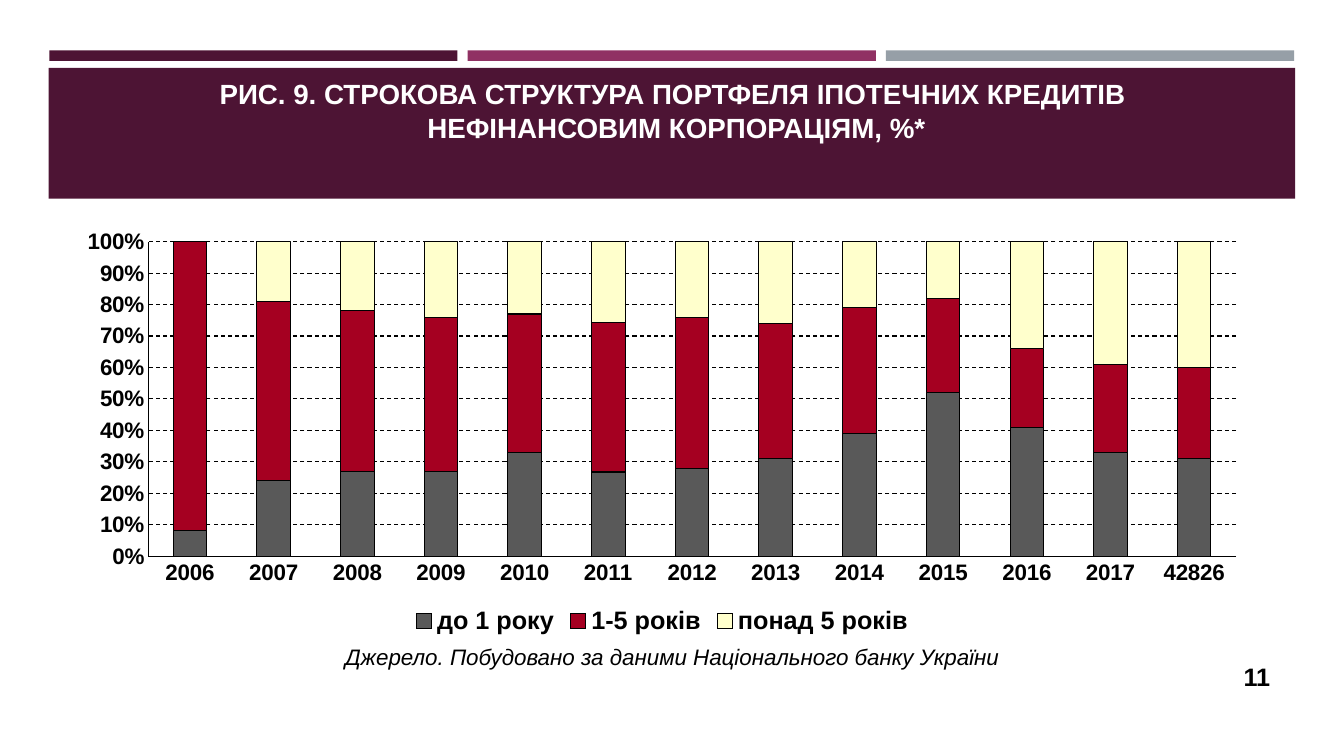
"""Builds the slide on the term structure of corporate mortgage loans."""
import dataclasses

import lxml.etree
import pptx
import pptx.chart.data
import pptx.dml.color
import pptx.enum.chart
import pptx.enum.dml
import pptx.enum.shapes
import pptx.enum.text
import pptx.oxml
import pptx.oxml.ns
import pptx.util

Pt = pptx.util.Pt
ALIGN = pptx.enum.text.PP_ALIGN
ANCHOR = pptx.enum.text.MSO_ANCHOR


@dataclasses.dataclass(frozen=True)
class Theme:
    font: str = "Arial"
    plum: str = "4D1434"
    accents: tuple = ("4D1434", "903163", "969FA7")
    terms: tuple = ("595959", "A50021", "FFFFCC")
    ink: str = "000000"
    light: str = "FFFFFF"
    title: float = 19.8
    body: float = 16
    legend: float = 18
    number: float = 18
    hairline: float = 0.75


def assign(target, values):
    for name, value in values.items():
        setattr(target, name, value)


class SlideBuilder:
    def __init__(self, slide, theme):
        self.slide = slide
        self.theme = theme

    def place(self, shape, box):
        assign(shape, dict(zip(("left", "top", "width", "height"), map(Pt, box))))

    def style_font(self, font, size, color=None, **flags):
        assign(font, {"name": self.theme.font, "size": Pt(size), **flags})
        font.color.rgb = pptx.dml.color.RGBColor.from_string(color or self.theme.ink)

    def style_line(self, line):
        line.color.rgb = pptx.dml.color.RGBColor.from_string(self.theme.ink)
        line.width = Pt(self.theme.hairline)

    def bar(self, box, color):
        shape = self.slide.shapes.add_shape(
            pptx.enum.shapes.MSO_SHAPE.RECTANGLE, *map(Pt, box))
        shape.fill.solid()
        shape.fill.fore_color.rgb = pptx.dml.color.RGBColor.from_string(color)
        shape.line.fill.background()
        shape.shadow.inherit = False
        self.slide.shapes.element.insert(2, shape.element)

    def set_text(self, shape, text, size, align, anchor, color=None, spacing=None, **flags):
        frame = shape.text_frame
        frame.text = text
        assign(frame, {"word_wrap": True, "vertical_anchor": anchor,
                       "auto_size": pptx.enum.text.MSO_AUTO_SIZE.NONE,
                       "margin_top": 0, "margin_bottom": 0})
        paragraph = frame.paragraphs[0]
        assign(paragraph, {"alignment": align, "space_before": Pt(0),
                           "line_spacing": spacing})
        for run in paragraph.runs:
            self.style_font(run.font, size, color, **flags)
        return paragraph

    def title(self, text, box):
        heading = self.slide.shapes.title
        self.place(heading, box)
        self.set_text(heading, text, self.theme.title, ALIGN.CENTER, ANCHOR.TOP,
                      self.theme.light, Pt(24.5), bold=True)

    def source(self, text, box):
        body = self.slide.placeholders[1]
        self.place(body, box)
        paragraph = self.set_text(body, text, self.theme.body, ALIGN.CENTER,
                                  ANCHOR.MIDDLE, italic=True)
        properties = paragraph._p.get_or_add_pPr()
        for name in ("marL", "indent"):
            properties.set(name, "0")
        lxml.etree.SubElement(properties, pptx.oxml.ns.qn("a:buNone"))

    def number(self, text, box):
        label = self.slide.shapes.add_textbox(*map(Pt, box))
        self.set_text(label, text, self.theme.number, ALIGN.RIGHT, ANCHOR.MIDDLE, bold=True)

    def axis(self, axis):
        none = pptx.enum.chart.XL_TICK_MARK.NONE
        assign(axis, {"major_tick_mark": none, "minor_tick_mark": none})
        self.style_font(axis.tick_labels.font, self.theme.body, bold=True)
        self.style_line(axis.format.line)

    def plot_area(self, chart, fractions):
        layout = pptx.oxml.parse_xml(
            f'<c:layout {pptx.oxml.ns.nsdecls("c")}><c:manualLayout>'
            '<c:layoutTarget val="inner"/><c:xMode val="edge"/><c:yMode val="edge"/>'
            + "".join(f'<c:{key} val="{value}"/>' for key, value in fractions.items())
            + "</c:manualLayout></c:layout>")
        area = chart._chartSpace.chart.plotArea
        for previous in area.findall(pptx.oxml.ns.qn("c:layout")):
            area.remove(previous)
        area.insert(0, layout)

    def chart(self, categories, shares, box):
        data = pptx.chart.data.CategoryChartData()
        data.categories = categories
        for term, values in shares.items():
            data.add_series(term, values)
        chart = self.slide.shapes.add_chart(
            pptx.enum.chart.XL_CHART_TYPE.COLUMN_STACKED_100, *map(Pt, box), data).chart
        assign(chart, {"has_title": False, "has_legend": True})
        self.style_font(chart.font, self.theme.body, bold=True)
        assign(chart.legend, {"position": pptx.enum.chart.XL_LEGEND_POSITION.BOTTOM,
                              "include_in_layout": False})
        self.style_font(chart.legend.font, self.theme.legend, bold=True)
        plot = chart.plots[0]
        assign(plot, {"gap_width": 150, "overlap": 100, "vary_by_categories": False})
        for series, color in zip(plot.series, self.theme.terms):
            series.format.fill.solid()
            series.format.fill.fore_color.rgb = pptx.dml.color.RGBColor.from_string(color)
            self.style_line(series.format.line)
        self.axis(chart.category_axis)
        scale = chart.value_axis
        self.axis(scale)
        assign(scale, {"minimum_scale": 0, "maximum_scale": 1, "major_unit": 0.1,
                       "has_major_gridlines": True})
        assign(scale.tick_labels, {"number_format": "0%", "number_format_is_linked": False})
        grid = scale.major_gridlines.format.line
        self.style_line(grid)
        grid.dash_style = pptx.enum.dml.MSO_LINE.DASH
        self.plot_area(chart, {"x": 0.07, "y": 0.05, "w": 0.91, "h": 0.75})


def main():
    theme = Theme()
    deck = pptx.Presentation()
    assign(deck, {"slide_width": Pt(960), "slide_height": Pt(540)})
    builder = SlideBuilder(deck.slides.add_slide(deck.slide_layouts[1]), theme)

    for column, accent in enumerate(theme.accents):
        builder.bar((35.2 + 298.8 * column, 36, 291.6, 7.5), accent)
    builder.bar((34.8, 48.5, 890.4, 93.5), theme.plum)
    builder.title("РИС. 9. СТРОКОВА СТРУКТУРА ПОРТФЕЛЯ ІПОТЕЧНИХ КРЕДИТІВ \v"
                  "НЕФІНАНСОВИМ КОРПОРАЦІЯМ, %*", (35.2, 54, 895.7, 80))
    builder.source("Джерело. Побудовано за даними Національного банку України",
                   (46, 456, 868.4, 26))
    periods = [str(year) for year in range(2006, 2018)] + ["42826"]
    shares = {
        "до 1 року": (8, 24, 27, 27, 33, 27, 28, 31, 39, 52, 41, 33, 31),
        "1-5 років": (92, 57, 51, 49, 44, 48, 48, 43, 40, 30, 25, 28, 29),
        "понад 5 років": (0, 19, 22, 24, 23, 26, 24, 26, 21, 18, 34, 39, 40),
    }
    builder.chart(periods, shares, (46, 157.7, 854, 299.5))
    builder.number("11", (831.6, 469, 82.8, 29))
    deck.save("out.pptx")


if __name__ == "__main__":
    main()
